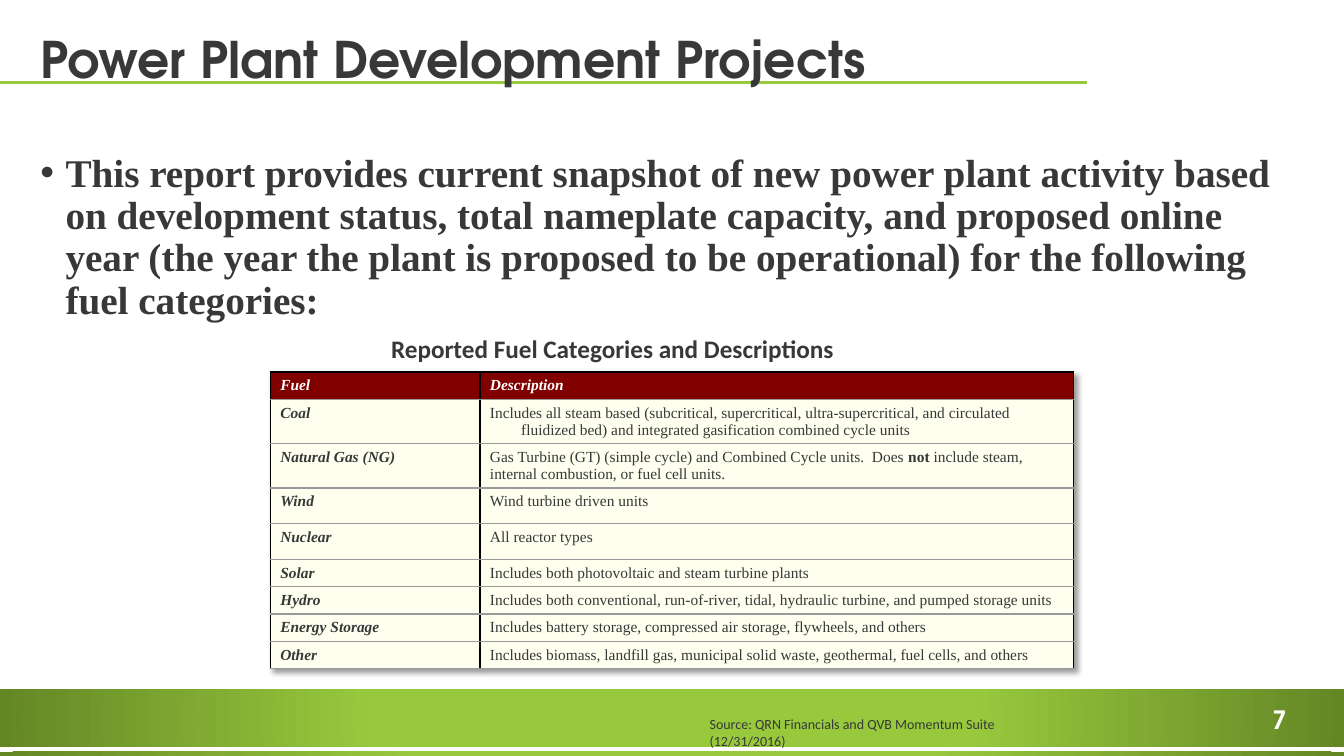
from dataclasses import dataclass
from typing import Any

from lxml.etree import SubElement
from pptx import Presentation
from pptx.dml.color import RGBColor
from pptx.enum.shapes import MSO_CONNECTOR, MSO_SHAPE
from pptx.enum.text import MSO_ANCHOR, MSO_AUTO_SIZE, PP_ALIGN
from pptx.oxml import parse_xml
from pptx.oxml.ns import nsdecls, qn
from pptx.util import Inches, Pt

GREEN, DARK_GREEN = "98C93D", "648725"
INK, WHITE, BLACK, GREY = "373838", "FFFFFF", "000000", "999999"
MAROON, CREAM = "800000", "FFFFEF"
HEADING_FONT, SERIF, SANS = "TeX Gyre Adventor", "Times New Roman", "Calibri"


@dataclass
class Band:
    left: float
    top: float
    width: float
    height: float
    solid_until: int
    rotation: int = 0


@dataclass
class Label:
    text: str
    left: float
    top: float
    width: float
    height: float
    wrap: bool
    style: dict[str, Any]


@dataclass
class FuelRow:
    fuel: str
    description: tuple[str, ...]
    height: float = 0.27
    hanging: bool = True


BANDS = [
    Band(0, 6.84, 13.33, 0.57, 44),
    Band(6.64, 0.82, 0.05, 13.33, 37, 90),
]
LABELS = [
    Label("7", 12.52, 6.94, 0.48, 0.4, False,
          {"size": Pt(18), "name": HEADING_FONT, "bold": True, "color": WHITE}),
    Label("Reported Fuel Categories and Descriptions", 3.78, 3.26, 5.78, 0.4, True,
          {"size": Pt(18), "name": SANS, "bold": True, "color": INK}),
    Label("Source: QRN Financials and QVB Momentum Suite (12/31/2016)",
          6.94, 7.05, 3.58, 0.27, False,
          {"size": Pt(10), "name": SANS, "bold": False, "color": INK}),
]
FUEL_ROWS = [
    FuelRow("Fuel", ("Description",)),
    FuelRow("Coal", ("Includes all steam based (subcritical, supercritical, ultra-supercritical, "
                     "and circulated fluidized bed) and integrated gasification combined cycle "
                     "units",), 0.44),
    FuelRow("Natural Gas (NG)",
            ("Gas Turbine (GT) (simple cycle) and Combined Cycle units.  Does ", "not",
             " include steam, internal combustion, or fuel cell units."), 0.44, False),
    FuelRow("Wind", ("Wind turbine driven units",), 0.355),
    FuelRow("Nuclear", ("All reactor types",), 0.355),
    FuelRow("Solar", ("Includes both photovoltaic and steam turbine plants",)),
    FuelRow("Hydro", ("Includes both conventional, run-of-river, tidal, hydraulic turbine, "
                      "and pumped storage units",)),
    FuelRow("Energy Storage",
            ("Includes battery storage, compressed air storage, flywheels, and others",)),
    FuelRow("Other", ("Includes biomass, landfill gas, municipal solid waste, geothermal, "
                      "fuel cells, and others",)),
]


def paint(color_format: Any, value: str) -> None:
    color_format.rgb = RGBColor.from_string(value)


def apply_font(font: Any, style: dict[str, Any]) -> None:
    for attribute, value in style.items():
        if attribute == "color":
            paint(font.color, value)
        else:
            setattr(font, attribute, value)


def place(shape: Any, left: float, top: float, width: float, height: float) -> None:
    shape.left, shape.top = Inches(left), Inches(top)
    shape.width, shape.height = Inches(width), Inches(height)


def set_indent(paragraph: Any, hanging: float) -> None:
    properties = paragraph._p.get_or_add_pPr()
    properties.set("marL", str(Inches(hanging)))
    properties.set("indent", str(-Inches(hanging)))


def add_band(slide: Any, band: Band) -> None:
    shape = slide.shapes.add_shape(
        MSO_SHAPE.RECTANGLE, Inches(band.left), Inches(band.top),
        Inches(band.width), Inches(band.height))
    shape.shadow.inherit = False
    shape.rotation = band.rotation
    shape.line.fill.background()
    gradient = parse_xml(
        f'<a:gradFill {nsdecls("a")} rotWithShape="1"><a:gsLst>'
        f'<a:gs pos="{band.solid_until * 1000}"><a:srgbClr val="{GREEN}"/></a:gs>'
        f'<a:gs pos="100000"><a:srgbClr val="{DARK_GREEN}"/></a:gs></a:gsLst>'
        '<a:path path="circle"><a:fillToRect l="50000" t="50000" r="50000" b="50000"/>'
        '</a:path></a:gradFill>')
    shape._element.spPr.find(qn("a:prstGeom")).addnext(gradient)


def add_label(slide: Any, label: Label) -> None:
    box = slide.shapes.add_textbox(
        Inches(label.left), Inches(label.top), Inches(label.width), Inches(label.height))
    frame = box.text_frame
    frame.word_wrap = label.wrap
    frame.auto_size = MSO_AUTO_SIZE.SHAPE_TO_FIT_TEXT
    frame.text = label.text
    apply_font(frame.paragraphs[0].runs[0].font, label.style)


def add_title_rule(slide: Any) -> None:
    rule = slide.shapes.add_connector(
        MSO_CONNECTOR.STRAIGHT, 0, Inches(0.82), Inches(10.78), Inches(0.82))
    paint(rule.line.color, GREEN)
    rule.line.width = Pt(1.75)
    SubElement(rule._element.spPr, qn("a:effectLst"))


def fill_placeholder(slide: Any, holder: Any, text: str, anchor: Any,
                     style: dict[str, Any]) -> Any:
    slide.shapes.element.append(holder.element)
    frame = holder.text_frame
    frame.text = text
    frame.word_wrap = True
    frame.auto_size = MSO_AUTO_SIZE.NONE
    frame.vertical_anchor = anchor
    paragraph = frame.paragraphs[0]
    paragraph.alignment = PP_ALIGN.LEFT
    paragraph.line_spacing = 0.9
    paragraph.space_before = Pt(0)
    apply_font(paragraph.runs[0].font, style)
    return paragraph


def set_borders(cell: Any, top: str) -> None:
    colors = {"lnL": BLACK, "lnR": BLACK, "lnT": top, "lnB": GREY}
    for position, (side, color) in enumerate(colors.items()):
        cell._tc.get_or_add_tcPr().insert(position, parse_xml(
            f'<a:{side} {nsdecls("a")} w="12700"><a:solidFill>'
            f'<a:srgbClr val="{color}"/></a:solidFill></a:{side}>'))


def write_cell(cell: Any, texts: tuple[str, ...], hanging: bool, heading: bool,
               fuel_name: bool) -> None:
    cell.fill.solid()
    paint(cell.fill.fore_color, MAROON if heading else CREAM)
    set_borders(cell, BLACK if heading else GREY)
    paragraph = cell.text_frame.paragraphs[0]
    if hanging:
        set_indent(paragraph, 0.31)
    for index, text in enumerate(texts):
        run = paragraph.add_run()
        run.text = text
        strong = heading or fuel_name
        apply_font(run.font, {"size": Pt(11), "name": SERIF, "italic": strong,
                              "bold": strong or index == 1,
                              "color": WHITE if heading else INK})


def add_fuel_table(slide: Any) -> None:
    total = sum(row.height for row in FUEL_ROWS)
    table = slide.shapes.add_table(len(FUEL_ROWS), 2, Inches(2.68), Inches(3.69),
                                   Inches(7.97), Inches(total)).table
    table.horz_banding = False
    table._tbl.tblPr.insert(0, parse_xml(
        f'<a:effectLst {nsdecls("a")}><a:outerShdw blurRad="50800" dist="38100" dir="2700000">'
        f'<a:srgbClr val="{BLACK}"><a:alpha val="40000"/></a:srgbClr>'
        '</a:outerShdw></a:effectLst>'))
    for column, width in zip(table.columns, (2.08, 5.89)):
        column.width = Inches(width)
    for index, entry in enumerate(FUEL_ROWS):
        table.rows[index].height = Inches(entry.height)
        write_cell(table.cell(index, 0), (entry.fuel,), True, index == 0, True)
        write_cell(table.cell(index, 1), entry.description, entry.hanging, index == 0, False)


def main() -> None:
    deck = Presentation()
    deck.slide_width, deck.slide_height = Inches(13.33), Inches(7.5)
    slide = deck.slides.add_slide(deck.slide_layouts[1])
    heading, summary = slide.shapes.title, slide.placeholders[1]
    add_title_rule(slide)
    for band in BANDS:
        add_band(slide, band)
    place(summary, 0.3, 1.47, 12.67, 4.39)
    statement = fill_placeholder(
        slide, summary,
        "This report provides current snapshot of new power plant activity based on development "
        "status, total nameplate capacity, and proposed online year (the year the plant is "
        "proposed to be operational) for the following fuel categories:",
        MSO_ANCHOR.TOP, {"size": Pt(28), "name": SERIF, "bold": True, "color": INK})
    set_indent(statement, 0.25)
    properties = statement._p.get_or_add_pPr()
    SubElement(properties, qn("a:buFont")).set("typeface", "Arial")
    SubElement(properties, qn("a:buChar")).set("char", "•")
    place(heading, 0.3, 0.28, 12.67, 0.66)
    fill_placeholder(slide, heading, "Power Plant Development Projects", MSO_ANCHOR.BOTTOM,
                     {"size": Pt(36), "name": HEADING_FONT, "bold": True, "color": INK})
    add_fuel_table(slide)
    for label in LABELS:
        add_label(slide, label)
    deck.save("out.pptx")


if __name__ == "__main__":
    main()
